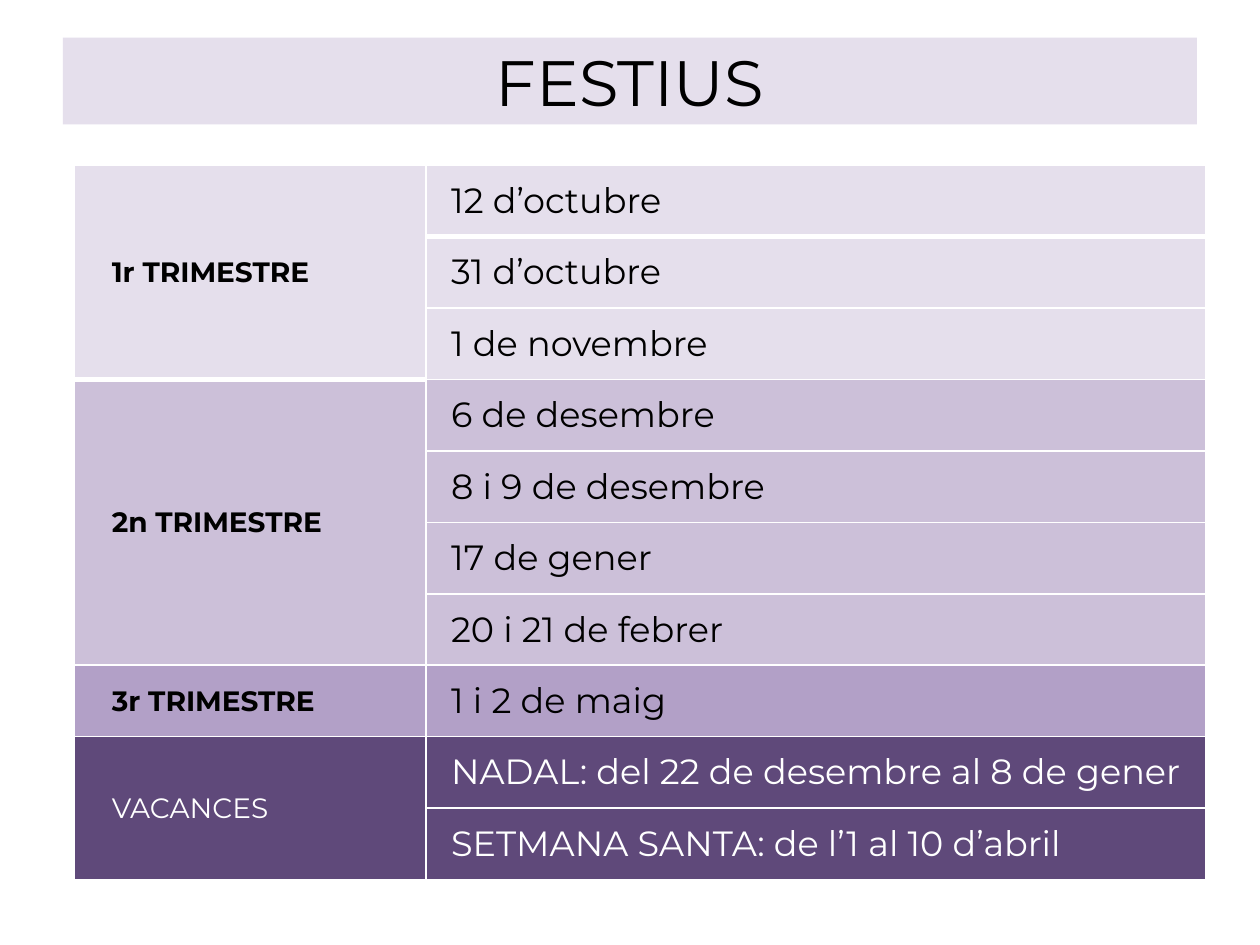
import pptx
import pptx.dml.color
import pptx.enum.shapes
import pptx.enum.text
import pptx.oxml
import pptx.oxml.ns
import pptx.util
from pptx.util import Cm

COLORS = {
    "lilac": "E5DFEC", "mauve": "CCC0D9", "violet": "B2A0C7",
    "purple": "5F497A", "black": "000000", "white": "FFFFFF",
}
FONT = "Montserrat"
TITLE = "FESTIUS"
# label, fill, text colour, bold label, dates
PERIODS = [
    ("1r TRIMESTRE", "lilac", "black", True,
     ["12 d’octubre", "31 d’octubre", "1 de novembre"]),
    ("2n TRIMESTRE", "mauve", "black", True,
     ["6 de desembre", "8 i 9 de desembre", "17 de gener", "20 i 21 de febrer"]),
    ("3r TRIMESTRE", "violet", "black", True, ["1 i 2 de maig"]),
    ("VACANCES", "purple", "white", False,
     ["NADAL: del 22 de desembre al 8 de gener",
      "SETMANA SANTA: de l’1 al 10 d’abril"]),
]
COLUMN_WIDTHS = [7.09, 15.72]
ROW_HEIGHT = 1.44
LABEL_INDENT, DATE_INDENT = 0.5, 0.25
THIN, THICK = 1, 3


def rgb(name):
    return pptx.dml.color.RGBColor.from_string(COLORS[name])


def paint(item, color):
    item.fill.solid()
    item.fill.fore_color.rgb = rgb(color)


def write(para, text, size, color, bold=False):
    span = para.add_run()
    span.text = text
    span.font.name = FONT
    span.font.size = pptx.util.Pt(size)
    span.font.bold = bold
    span.font.color.rgb = rgb(color)


def set_borders(cell, bottom):
    """Draw white lines on all four sides; widths in points."""
    properties = cell._tc.get_or_add_tcPr()
    widths = {"lnL": THIN, "lnR": THIN, "lnT": THIN, "lnB": bottom}
    for position, (side, width) in enumerate(widths.items()):
        properties.insert(position, pptx.oxml.parse_xml(
            f'<a:{side} {pptx.oxml.ns.nsdecls("a")} w="{pptx.util.Pt(width)}">'
            f'<a:solidFill><a:srgbClr val="{COLORS["white"]}"/></a:solidFill>'
            f'</a:{side}>'))


def fill_cell(cell, text, size, color, bold, indent):
    cell.vertical_anchor = pptx.enum.text.MSO_ANCHOR.MIDDLE
    para = cell.text_frame.paragraphs[0]
    para._p.get_or_add_pPr().set("marL", str(Cm(indent)))
    write(para, text, size, color, bold)


def add_title(page):
    box = page.shapes.add_shape(pptx.enum.shapes.MSO_SHAPE.RECTANGLE,
                                Cm(1.27), Cm(0.76), Cm(22.86), Cm(1.75))
    box.shadow.inherit = False
    paint(box, "lilac")
    box.line.fill.background()
    box.text_frame.vertical_anchor = pptx.enum.text.MSO_ANCHOR.MIDDLE
    para = box.text_frame.paragraphs[0]
    para.alignment = pptx.enum.text.PP_ALIGN.CENTER
    write(para, TITLE, 36.6, "black")


def add_calendar(page):
    row_count = sum(len(dates) for *_, dates in PERIODS)
    table = page.shapes.add_table(
        row_count, len(COLUMN_WIDTHS), Cm(1.5), Cm(3.33),
        Cm(sum(COLUMN_WIDTHS)), Cm(ROW_HEIGHT * row_count)).table
    table.first_row = table.horz_banding = False
    for column, width in zip(table.columns, COLUMN_WIDTHS):
        column.width = Cm(width)
    for row in table.rows:
        row.height = Cm(ROW_HEIGHT)

    first = 0
    for label, fill, color, bold, dates in PERIODS:
        for row, date in enumerate(dates, first):
            for column in range(len(COLUMN_WIDTHS)):
                cell = table.cell(row, column)
                paint(cell, fill)
                set_borders(cell, THICK if row == 0 else THIN)
            fill_cell(table.cell(row, 1), date, 20, color, False, DATE_INDENT)
        heading = table.cell(first, 0)
        if len(dates) > 1:
            heading.merge(table.cell(first + len(dates) - 1, 0))
        fill_cell(heading, label, 16, color, bold, LABEL_INDENT)
        first += len(dates)


def main():
    deck = pptx.Presentation()
    deck.slide_width, deck.slide_height = Cm(25.4), Cm(19.05)
    page = deck.slides.add_slide(deck.slide_layouts[6])
    add_title(page)
    add_calendar(page)
    deck.save("out.pptx")


if __name__ == "__main__":
    main()
